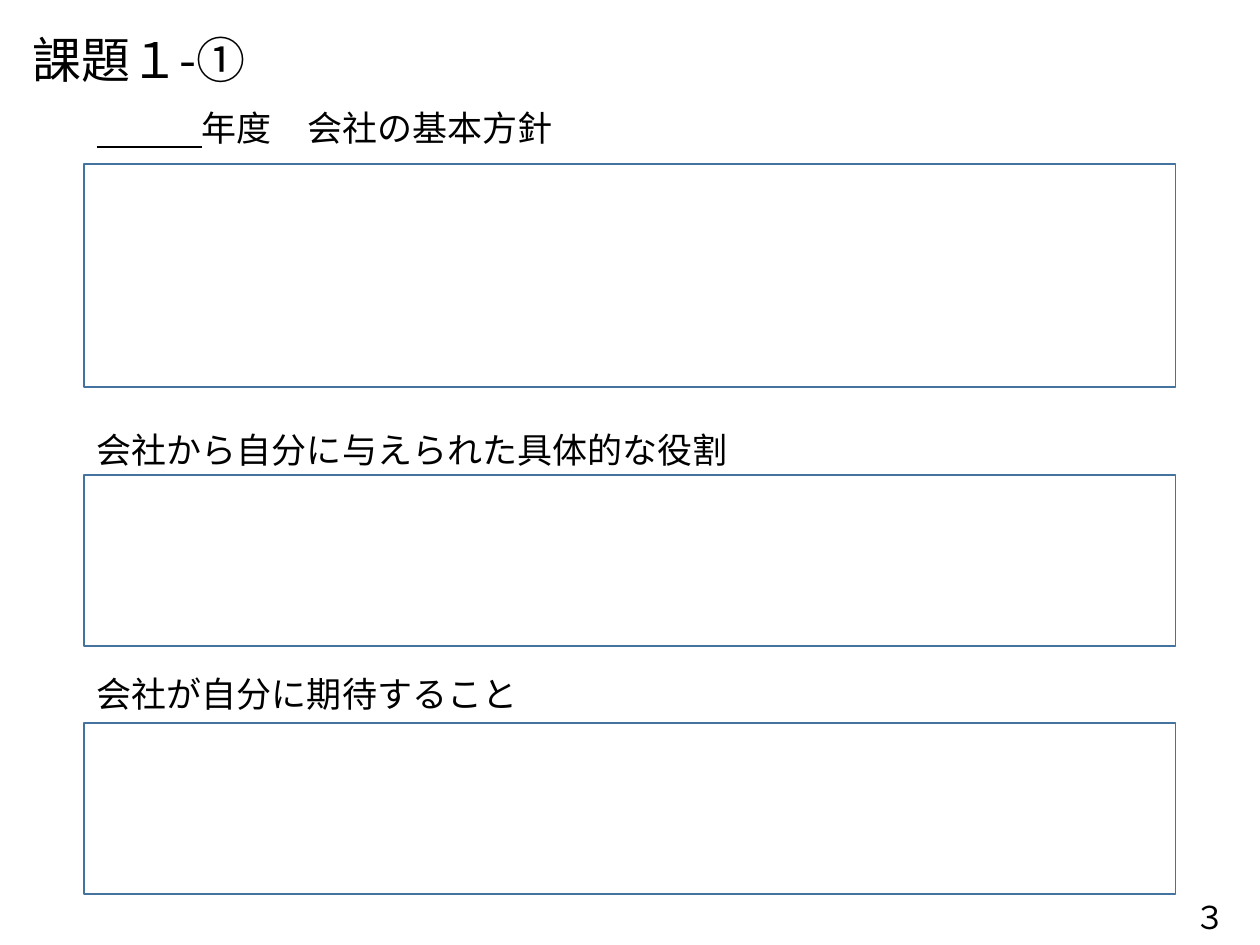
import pptx
import pptx.dml.color
import pptx.enum.shapes
import pptx.enum.text
import pptx.oxml.ns
import pptx.util
from lxml import etree
from pptx.util import Cm

FONT = "Noto Sans CJK JP"
BLACK = "000000"
BLUE = "43739E"


def color(value):
    return pptx.dml.color.RGBColor.from_string(value)


class Sheet:
    """Holds the style and the current slide."""

    def __init__(self, slide):
        self.slide = slide

    def format_run(self, r, size):
        r.font.size = pptx.util.Pt(size)
        r.font.name = FONT
        r.font.color.rgb = color(BLACK)
        # East Asian text needs its own font entry
        latin = r.font._element.find(pptx.oxml.ns.qn("a:latin"))
        ea = etree.Element(pptx.oxml.ns.qn("a:ea"), typeface=FONT)
        latin.addnext(ea)

    def fill_text(self, sp, runs, size, align, wrap):
        tf = sp.text_frame
        tf.word_wrap = wrap
        tf.auto_size = pptx.enum.text.MSO_AUTO_SIZE.NONE
        tf.vertical_anchor = pptx.enum.text.MSO_ANCHOR.TOP
        p = tf.paragraphs[0]
        p.alignment = align
        for text in runs:
            r = p.add_run()
            r.text = text
            self.format_run(r, size)
        return p

    def title(self, text, left, top, width, height):
        sp = self.slide.shapes.title
        sp.left, sp.top, sp.width, sp.height = map(Cm, (left, top, width, height))
        self.fill_text(sp, [text], 28, pptx.enum.text.PP_ALIGN.LEFT, True)

    def text(self, runs, left, top, width, height, size=20,
             align=pptx.enum.text.PP_ALIGN.LEFT, wrap=False):
        sp = self.slide.shapes.add_textbox(Cm(left), Cm(top), Cm(width), Cm(height))
        return self.fill_text(sp, runs, size, align, wrap)

    def answer_box(self, left, top, width, height):
        sp = self.slide.shapes.add_shape(
            pptx.enum.shapes.MSO_SHAPE.RECTANGLE,
            Cm(left), Cm(top), Cm(width), Cm(height))
        sp.shadow.inherit = False
        sp.fill.background()
        sp.line.color.rgb = color(BLUE)
        sp.line.width = pptx.util.Pt(1)


def main():
    prs = pptx.Presentation()
    prs.slide_width, prs.slide_height = Cm(25.4), Cm(19.05)
    sheet = Sheet(prs.slides.add_slide(prs.slide_layouts[5]))

    # Heading
    sheet.title("課題１-①", 0.41, 0.46, 4.93, 1.45)

    # Questions: runs, label top, label width, box top, box height
    questions = [
        (["　　　", "年度　会社の基本方針"], 2.03, 9.78, 3.3, 4.5),
        (["会社から自分に与えられた具体的な役割"], 8.51, 13.33, 9.58, 3.45),
        (["会社が自分に期待すること"], 13.44, 9.07, 14.58, 3.45),
    ]
    left = 1.7
    for runs, label_top, label_width, box_top, box_height in questions:
        sheet.answer_box(left, box_top, 22, box_height)
        p = sheet.text(runs, left, label_top, label_width, 1.12)
        # The blank for the year is an underlined gap
        if len(runs) > 1:
            p.runs[0].font.underline = True

    # Page number
    sheet.text(["３"], 23.4, 17.98, 2, 1.02, size=18,
               align=pptx.enum.text.PP_ALIGN.CENTER, wrap=True)

    prs.save("out.pptx")


if __name__ == "__main__":
    main()
